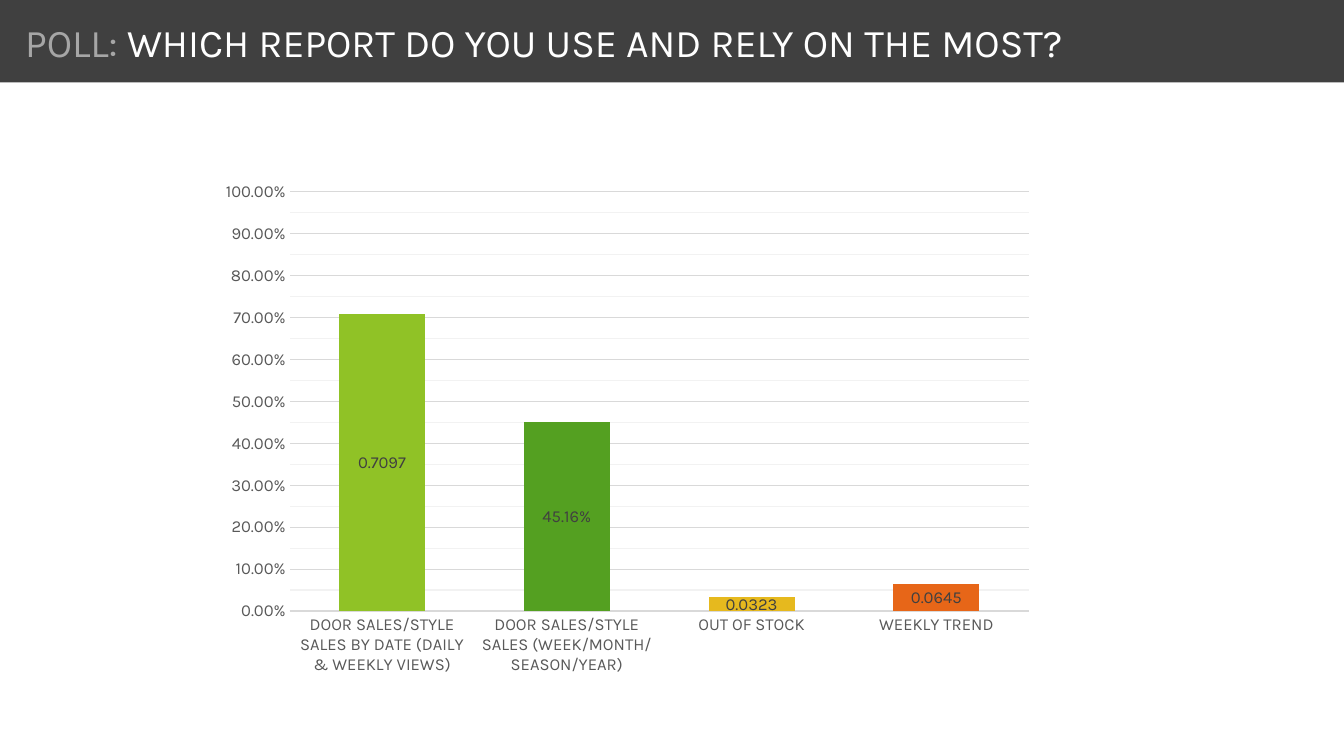
from dataclasses import dataclass

from pptx import Presentation
from pptx import util as u
from pptx.chart import data as cd
from pptx.dml import color
from pptx.enum import chart as ec, shapes, text
from pptx.oxml import ns, parse_xml


@dataclass(frozen=True)
class Theme:
    face: str = "Karla"
    band: str = "404040"
    lead: str = "A6A6A6"
    head: str = "FFFFFF"
    label: str = "404040"
    axis: str = "595959"
    grid: str = "D9D9D9"
    minor: str = "F2F2F2"
    big: int = 28
    small: int = 12


@dataclass(frozen=True)
class Bar:
    name: str
    value: float
    fill: str
    form: str = "General"


@dataclass(frozen=True)
class Box:
    left: float
    top: float
    width: float
    height: float

    def cm(self) -> list:
        return [u.Cm(n) for n in (self.left, self.top, self.width, self.height)]


THEME = Theme()
WIDE, HIGH = 33.87, 19.05
BAND = Box(0, 0, WIDE, 2.08)
TITLE = Box(0.38, 0.33, WIDE, 2.08)
CHART = Box(5.69, 4.09, 22.58, 13.56)
PLOT = {"x": 0.06, "y": 0.055, "w": 0.835, "h": 0.779}
BARS = [
    Bar("DOOR SALES/STYLE SALES BY DATE (DAILY\n& WEEKLY VIEWS)", 0.7097, "90C226"),
    Bar("DOOR SALES/STYLE SALES (WEEK/MONTH/\nSEASON/YEAR)", 0.4516, "54A021", "0.00%"),
    Bar("OUT OF STOCK", 0.0323, "E6B91E"),
    Bar("WEEKLY TREND", 0.0645, "E76618"),
]


def apply(item, values: dict) -> None:
    for key, value in values.items():
        setattr(item, key, value)


def paint(fill, tint: str) -> None:
    fill.solid()
    fill.fore_color.rgb = color.RGBColor.from_string(tint)


def style(font, size: int, tint: str) -> None:
    apply(font, {"name": THEME.face, "size": u.Pt(size), "bold": False})
    paint(font.fill, tint)


def rule(line, tint: str) -> None:
    line.width = u.Pt(0.75)
    paint(line.fill, tint)


def add_head(slide) -> None:
    band = slide.shapes.add_shape(shapes.MSO_SHAPE.RECTANGLE, *BAND.cm())
    band.shadow.inherit = False
    paint(band.fill, THEME.band)
    band.line.fill.background()
    title = slide.shapes.title
    title.element.addprevious(band.element)
    apply(title, dict(zip(("left", "top", "width", "height"), TITLE.cm())))
    frame = title.text_frame
    apply(frame, {
        "word_wrap": True,
        "auto_size": text.MSO_AUTO_SIZE.NONE,
        "vertical_anchor": text.MSO_ANCHOR.TOP,
    })
    para = frame.paragraphs[0]
    para.alignment = text.PP_ALIGN.LEFT
    for words, tint in (
        ("POLL: ", THEME.lead),
        ("WHICH REPORT DO YOU USE AND RELY ON THE MOST?", THEME.head),
    ):
        run = para.add_run()
        run.text = words
        style(run.font, THEME.big, tint)


def set_plot(chart) -> None:
    area = chart.element.xpath(".//c:plotArea")[0]
    for old in area.xpath("./c:layout"):
        area.remove(old)
    sides = "".join(f'<c:{key} val="{val}"/>' for key, val in PLOT.items())
    area.insert(0, parse_xml(
        f'<c:layout {ns.nsdecls("c")}><c:manualLayout>'
        '<c:layoutTarget val="inner"/><c:xMode val="edge"/><c:yMode val="edge"/>'
        f"{sides}</c:manualLayout></c:layout>"
    ))


def set_minor(chart) -> None:
    grid = chart.element.xpath(".//c:valAx/c:minorGridlines")[0]
    grid.append(parse_xml(
        f'<c:spPr {ns.nsdecls("c", "a")}><a:ln w="{u.Pt(0.75)}"><a:solidFill>'
        f'<a:srgbClr val="{THEME.minor}"/></a:solidFill></a:ln></c:spPr>'
    ))


def set_axes(chart) -> None:
    cats, vals = chart.category_axis, chart.value_axis
    for axis in (cats, vals):
        apply(axis, {
            "major_tick_mark": ec.XL_TICK_MARK.NONE,
            "minor_tick_mark": ec.XL_TICK_MARK.NONE,
        })
        style(axis.tick_labels.font, THEME.small, THEME.axis)
    rule(cats.format.line, THEME.grid)
    vals.format.line.fill.background()
    apply(vals, {
        "minimum_scale": 0,
        "maximum_scale": 1,
        "major_unit": 0.1,
        "minor_unit": 0.05,
        "has_major_gridlines": True,
        "has_minor_gridlines": True,
    })
    apply(vals.tick_labels, {"number_format": "0.00%", "number_format_is_linked": False})
    rule(vals.major_gridlines.format.line, THEME.grid)
    set_minor(chart)


def add_poll(slide) -> None:
    data = cd.CategoryChartData()
    data.categories = [bar.name for bar in BARS]
    for num, bar in enumerate(BARS):
        row = [bar.value if num == col else None for col in range(len(BARS))]
        data.add_series(f"Series {num + 1}", row, bar.form)
    kind = ec.XL_CHART_TYPE.COLUMN_STACKED
    chart = slide.shapes.add_chart(kind, *CHART.cm(), data).chart
    apply(chart, {"has_legend": False, "has_title": False})
    style(chart.font, THEME.small, THEME.axis)
    plot = chart.plots[0]
    apply(plot, {"gap_width": 115, "overlap": 100, "vary_by_categories": False})
    set_plot(chart)
    set_axes(chart)
    for bar, series in zip(BARS, plot.series):
        paint(series.format.fill, bar.fill)
        labels = series.data_labels
        apply(labels, {
            "show_value": True,
            "position": ec.XL_LABEL_POSITION.CENTER,
            "number_format": bar.form,
            "number_format_is_linked": False,
        })
        style(labels.font, THEME.small, THEME.label)


def main() -> None:
    deck = Presentation()
    apply(deck, {"slide_width": u.Cm(WIDE), "slide_height": u.Cm(HIGH)})
    slide = deck.slides.add_slide(deck.slide_layouts.get_by_name("Title Only"))
    add_head(slide)
    add_poll(slide)
    deck.save("out.pptx")


if __name__ == "__main__":
    main()
